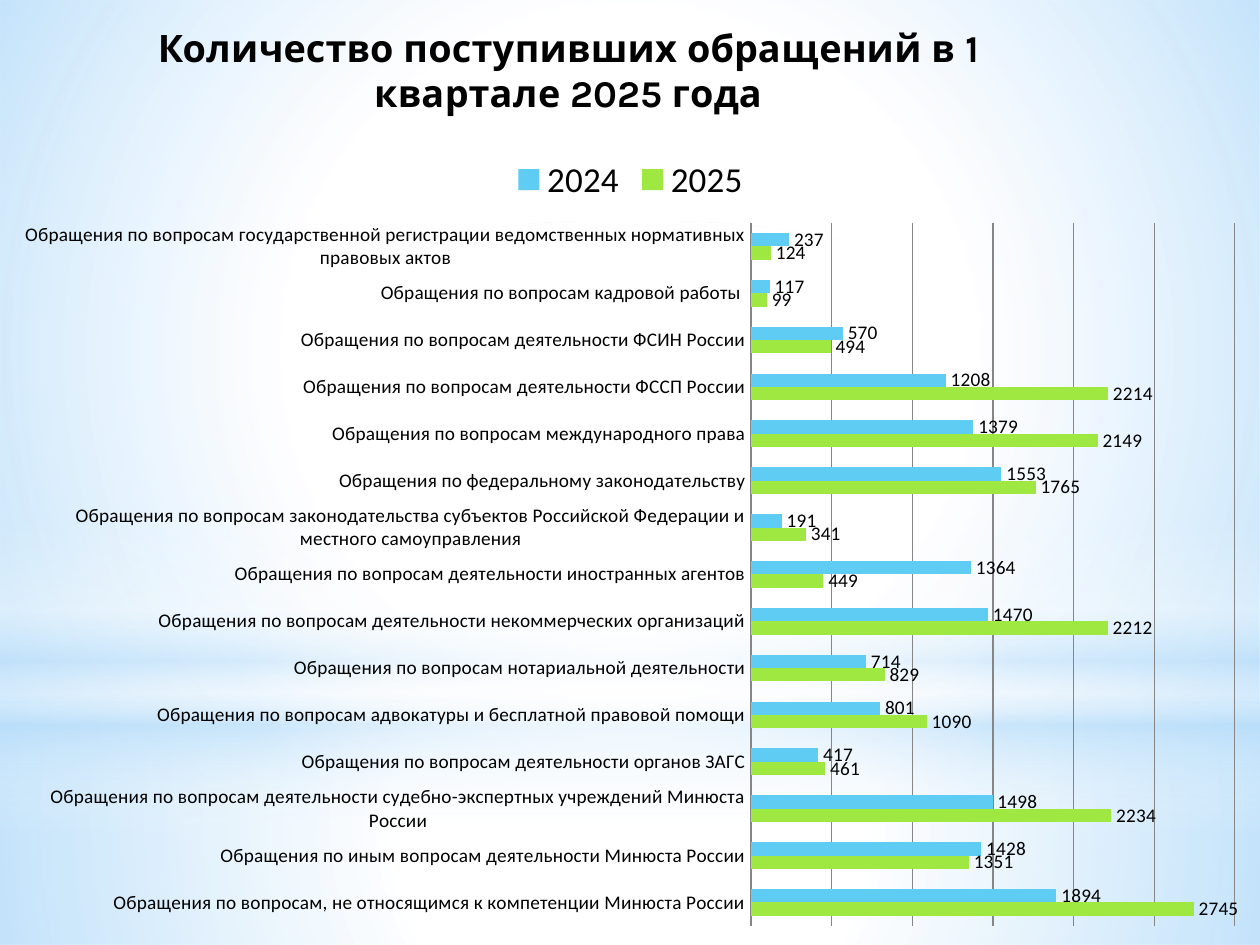
import pptx
import pptx.util
import pptx.chart.data
import pptx.dml.color
import pptx.enum.chart
import pptx.enum.shapes
import pptx.oxml
import pptx.oxml.ns
from dataclasses import dataclass

# Content
TITLE = "Количество поступивших обращений в 1 квартале 2025 года"
YEARS = ("2025", "2024")
APPEALS = [  # topic, 2025, 2024; bottom row first
    ("Обращения по вопросам, не относящимся к компетенции Минюста России", 2745, 1894),
    ("Обращения по иным вопросам деятельности Минюста России", 1351, 1428),
    ("Обращения по вопросам деятельности судебно-экспертных учреждений Минюста России", 2234, 1498),
    ("Обращения по вопросам деятельности органов ЗАГС", 461, 417),
    ("Обращения по вопросам адвокатуры и бесплатной правовой помощи", 1090, 801),
    ("Обращения по вопросам нотариальной деятельности", 829, 714),
    ("Обращения по вопросам деятельности некоммерческих организаций", 2212, 1470),
    ("Обращения по вопросам деятельности иностранных агентов", 449, 1364),
    ("Обращения по вопросам законодательства субъектов Российской Федерации "
     "и местного самоуправления", 341, 191),
    ("Обращения по федеральному законодательству", 1765, 1553),
    ("Обращения по вопросам международного права", 2149, 1379),
    ("Обращения по вопросам деятельности ФССП России", 2214, 1208),
    ("Обращения по вопросам деятельности ФСИН России", 494, 570),
    ("Обращения по вопросам кадровой работы ", 99, 117),
    ("Обращения по вопросам государственной регистрации ведомственных "
     "нормативных правовых актов", 124, 237),
]


@dataclass(frozen=True)
class Theme:
    white: str = "FFFFFF"
    sky: str = "B4DCFA"
    text: str = "000000"
    grid: str = "868686"
    bars: tuple = ("9FE842", "5ECCF3")
    title_font: str = "Karla"
    body_font: str = "Calibri"
    title_size: float = 21.6
    legend_size: int = 20
    label_size: int = 11


THEME = Theme()
WIDTH, HEIGHT = 1260, 945
RECT = pptx.enum.shapes.MSO_SHAPE.RECTANGLE
OVAL = pptx.enum.shapes.MSO_SHAPE.OVAL
W, S = THEME.white, THEME.sky

# Backdrop: preset, box in px, stops (position %, colour, opacity %), radial or not
BACKDROP = [
    (RECT, (0, 703, WIDTH, 242), [(0, W, 91), (37, W, 76), (100, S, 79)], True),
    (RECT, (0, 0, WIDTH, 703), [(0, W, 89), (48, W, 62), (100, S, 79)], True),
    (RECT, (0, 519, WIDTH, 315), [(0, W, 0), (29, W, 30), (45, S, 40),
                                  (55, W, 26), (65, S, 60), (100, W, 0)], False),
    (OVAL, (0, 221, WIDTH, 703), [(0, W, 100), (56, W, 0)], True),
]


def px(length):
    return pptx.util.Emu(round(length * 914400 / 126))


def rgb(value):
    return pptx.dml.color.RGBColor.from_string(value)


def style(font, size, name=THEME.body_font, bold=False):
    font.size, font.name, font.bold = pptx.util.Pt(size), name, bold
    font.color.rgb = rgb(THEME.text)


def add_glow(slide, preset, box, stops, radial):
    glow = slide.shapes.add_shape(preset, *map(px, box))
    glow.shadow.inherit = False
    glow.line.fill.background()
    glow.fill.background()
    colours = "".join(
        f'<a:gs pos="{position * 1000}"><a:srgbClr val="{colour}">'
        f'<a:alpha val="{opacity * 1000}"/></a:srgbClr></a:gs>'
        for position, colour, opacity in stops)
    direction = ('<a:path path="circle"><a:fillToRect l="50000" t="50000" r="50000" '
                 'b="50000"/></a:path>' if radial else '<a:lin ang="5400000" scaled="0"/>')
    gradient = pptx.oxml.parse_xml(
        f'<a:gradFill {pptx.oxml.ns.nsdecls("a")} rotWithShape="1">'
        f'<a:gsLst>{colours}</a:gsLst>{direction}</a:gradFill>')
    properties = glow._element.spPr
    properties.replace(properties.find(pptx.oxml.ns.qn("a:noFill")), gradient)


def place(part, left, top, size=None):
    """Fix a chart part at a px position; with a size, as the inner plot area."""
    qn = pptx.oxml.ns.qn
    values = [("x", left / WIDTH), ("y", top / HEIGHT)]
    if size:
        values += [("w", size[0] / WIDTH), ("h", size[1] / HEIGHT)]
    modes = '<c:layoutTarget val="inner"/>' if size else ""
    modes += '<c:xMode val="edge"/><c:yMode val="edge"/>'
    numbers = "".join(f'<c:{key} val="{value:.4f}"/>' for key, value in values)
    layout = pptx.oxml.parse_xml(
        f'<c:layout {pptx.oxml.ns.nsdecls("c")}><c:manualLayout>{modes}{numbers}'
        '</c:manualLayout></c:layout>')
    for old in part.findall(qn("c:layout")):
        part.remove(old)
    if size:
        part.insert(0, layout)
    else:
        part.find(qn("c:overlay")).addprevious(layout)


def add_appeals_chart(slide):
    data = pptx.chart.data.CategoryChartData()
    data.categories = [row[0] for row in APPEALS]
    for column, year in enumerate(YEARS, 1):
        data.add_series(year, [row[column] for row in APPEALS])
    chart = slide.shapes.add_chart(
        pptx.enum.chart.XL_CHART_TYPE.BAR_CLUSTERED,
        0, 0, px(WIDTH), px(HEIGHT), data).chart
    style(chart.font, 18, THEME.title_font)

    # Title and legend
    chart.has_title = True
    heading = chart.chart_title.text_frame.paragraphs[0].add_run()
    heading.text = TITLE
    style(heading.font, THEME.title_size, THEME.title_font, True)
    place(chart.chart_title._element, 151, 16)
    chart.has_legend = True
    chart.legend.position = pptx.enum.chart.XL_LEGEND_POSITION.TOP
    chart.legend.include_in_layout = False
    style(chart.legend.font, THEME.legend_size)
    place(chart.legend._element, 507, 151)

    # Axes
    topics, counts = chart.category_axis, chart.value_axis
    topics.major_tick_mark = pptx.enum.chart.XL_TICK_MARK.NONE
    style(topics.tick_labels.font, THEME.label_size)
    counts.visible = False
    counts.minimum_scale, counts.maximum_scale, counts.major_unit = 0, 3000, 500
    counts.has_major_gridlines = True
    for line in (topics.format.line, counts.major_gridlines.format.line):
        line.color.rgb = rgb(THEME.grid)
        line.width = pptx.util.Pt(0.75)

    # Bars and their values
    plot = chart.plots[0]
    plot.gap_width, plot.overlap, plot.vary_by_categories = 150, 0, False
    for bars, colour in zip(plot.series, THEME.bars):
        bars.format.fill.solid()
        bars.format.fill.fore_color.rgb = rgb(colour)
        labels = bars.data_labels
        labels.show_value = True
        labels.position = pptx.enum.chart.XL_LABEL_POSITION.OUTSIDE_END
        style(labels.font, THEME.label_size)
    place(chart._chartSpace.chart.plotArea, 751, 223, (484, 703))


def main():
    deck = pptx.Presentation()
    deck.slide_width, deck.slide_height = px(WIDTH), px(HEIGHT)
    slide = deck.slides.add_slide(deck.slide_layouts[6])
    slide.background.fill.solid()
    slide.background.fill.fore_color.rgb = rgb(THEME.white)
    for layer in BACKDROP:
        add_glow(slide, *layer)
    add_appeals_chart(slide)
    deck.save("out.pptx")


if __name__ == "__main__":
    main()
